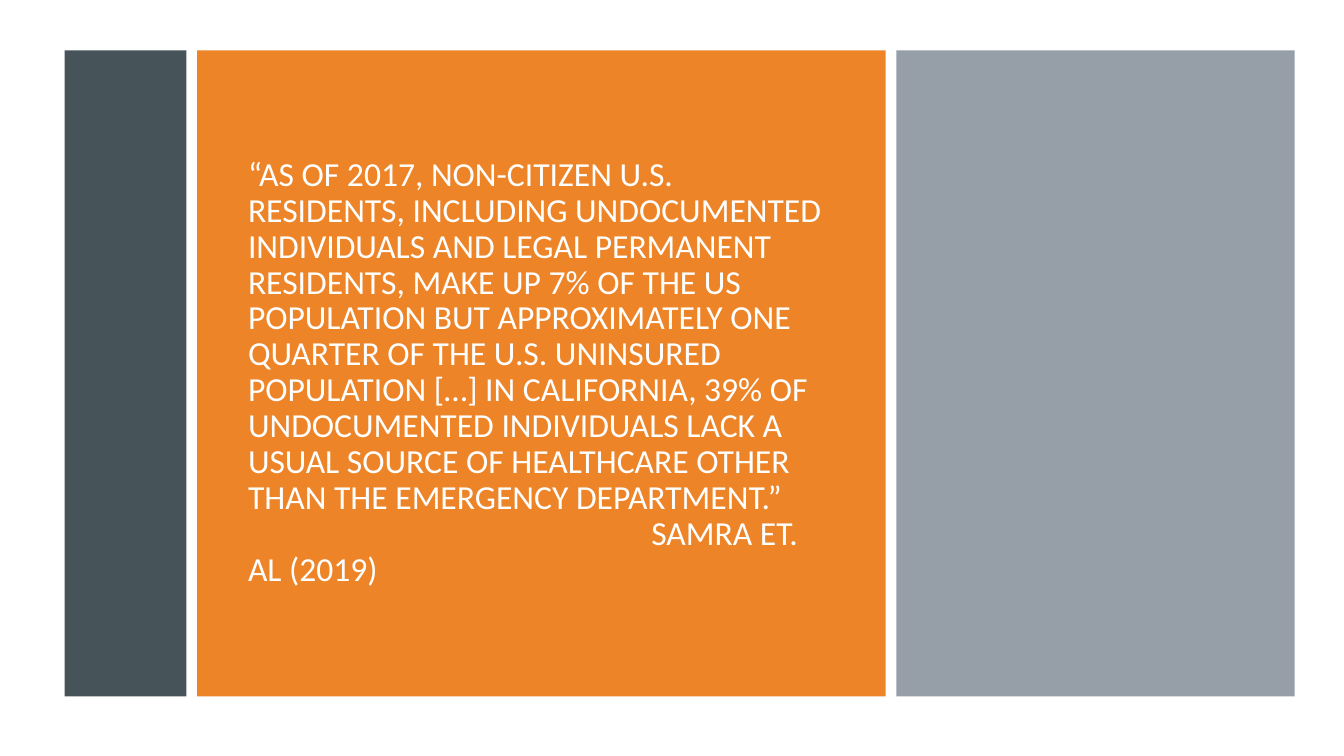
import pptx
import pptx.util
import pptx.dml.color
import pptx.enum.shapes
import pptx.enum.text

WIDTH, HEIGHT = 13.33, 7.5
TOP, PANEL_HEIGHT = 0.5, 6.41
LEFT, GAP = 0.64, 0.105
PANELS = [(1.21, "465359"), (6.83, "ED8428"), (3.95, "969FA7")]
QUOTE = (
    "“AS OF 2017, NON-CITIZEN U.S. RESIDENTS, INCLUDING UNDOCUMENTED "
    "INDIVIDUALS AND LEGAL PERMANENT RESIDENTS, MAKE UP 7% OF THE US "
    "POPULATION BUT APPROXIMATELY ONE QUARTER OF THE U.S. UNINSURED "
    "POPULATION […] IN CALIFORNIA, 39% OF UNDOCUMENTED INDIVIDUALS LACK A "
    "USUAL SOURCE OF HEALTHCARE OTHER THAN THE EMERGENCY DEPARTMENT.”"
)
CITATION = "SAMRA ET.\vAL (2019)"


def color(value):
    return pptx.dml.color.RGBColor.from_string(value)


def add_panel(page, left, top, width, height, fill):
    box = page.shapes.add_shape(
        pptx.enum.shapes.MSO_SHAPE.RECTANGLE,
        *map(pptx.util.Inches, (left, top, width, height)))
    box.shadow.inherit = False
    box.fill.solid()
    box.fill.fore_color.rgb = color(fill)
    box.line.fill.background()


def write(para, text, size=24, font="Calibri", fill="FFFFFF", spacing=0.89, indent=0):
    para.text = text
    para.alignment = pptx.enum.text.PP_ALIGN.LEFT
    para.line_spacing = spacing
    para.space_before = para.space_after = pptx.util.Pt(0)
    para._p.get_or_add_pPr().set("indent", str(pptx.util.Inches(indent)))
    for span in para.runs:
        span.font.size = pptx.util.Pt(size)
        span.font.name = font
        span.font.color.rgb = color(fill)


def place_title(page, left, top, width, height):
    title = page.shapes.title
    title.left, title.top, title.width, title.height = map(
        pptx.util.Inches, (left, top, width, height))
    title.element.getparent().append(title.element)
    frame = title.text_frame
    frame.word_wrap = True
    frame.auto_size = pptx.enum.text.MSO_AUTO_SIZE.NONE
    frame.vertical_anchor = pptx.enum.text.MSO_ANCHOR.MIDDLE
    write(frame.paragraphs[0], QUOTE)
    write(frame.add_paragraph(), CITATION, indent=4)


def main():
    deck = pptx.Presentation()
    deck.slide_width = pptx.util.Inches(WIDTH)
    deck.slide_height = pptx.util.Inches(HEIGHT)
    page = deck.slides.add_slide(deck.slide_layouts.get_by_name("Title Only"))
    add_panel(page, 0, 0, WIDTH, HEIGHT, "FFFFFF")
    left = LEFT
    for width, fill in PANELS:
        add_panel(page, left, TOP, width, PANEL_HEIGHT, fill)
        left += width + GAP
    place_title(page, 2.36, 1.12, 6.04, 5.16)
    deck.save("out.pptx")


if __name__ == "__main__":
    main()
